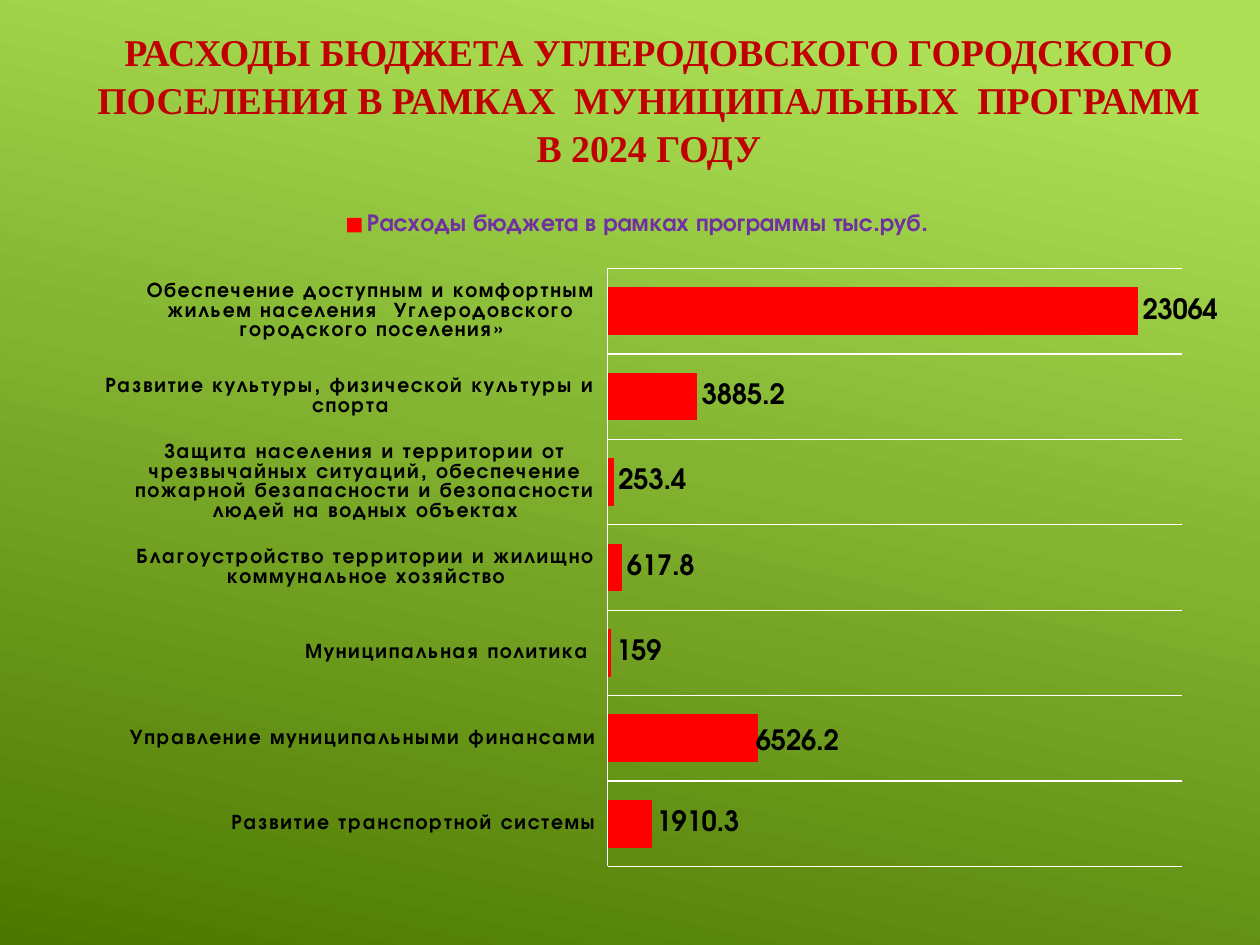
from lxml import etree
from pptx import Presentation
from pptx.chart.data import CategoryChartData
from pptx.dml.color import RGBColor
from pptx.enum.chart import XL_CHART_TYPE as ChartType
from pptx.enum.chart import XL_LABEL_POSITION as LabelPosition
from pptx.enum.chart import XL_LEGEND_POSITION as LegendPosition
from pptx.enum.chart import XL_TICK_LABEL_POSITION as TickLabelPosition
from pptx.enum.chart import XL_TICK_MARK as TickMark
from pptx.enum.text import MSO_ANCHOR, MSO_AUTO_SIZE, PP_ALIGN
from pptx.oxml import parse_xml
from pptx.util import Pt

CHART_NS = "http://schemas.openxmlformats.org/drawingml/2006/chart"
CHART_FONT = "TeX Gyre Adventor"
PROGRAMS = [
    ("Развитие транспортной системы", 1910.3),
    ("Управление муниципальными финансами", 6526.2),
    ("Муниципальная политика ", 159),
    ("Благоустройство территории и жилищно коммунальное хозяйство", 617.8),
    ("Защита населения и территории от чрезвычайных ситуаций, обеспечение "
     "пожарной безапасности и безопасности людей на водных объектах", 253.4),
    ("Развитие культуры, физической культуры и спорта", 3885.2),
    ("Обеспечение доступным и комфортным жильем населения  "
     "Углеродовского городского поселения»", 23064),
]


def set_font(font, name, size, color, bold=True):
    font.name, font.size, font.bold = name, Pt(size), bold
    font.color.rgb = RGBColor.from_string(color)


def make_layout(**settings):
    """Return a manual chart layout element with the given settings."""
    items = "".join(f'<c:{key} val="{value}"/>' for key, value in settings.items())
    return parse_xml(f'<c:layout xmlns:c="{CHART_NS}"><c:manualLayout>{items}'
                     "</c:manualLayout></c:layout>")


presentation = Presentation()
presentation.slide_width, presentation.slide_height = Pt(720), Pt(540)
slide = presentation.slides.add_slide(presentation.slide_layouts[5])

# Background
background = slide.background.fill
background.gradient()
background.gradient_angle = 258
for stop, position, color in zip(background.gradient_stops, (0.1, 1), ("ACDF55", "4C7800")):
    stop.position = position
    stop.color.rgb = RGBColor.from_string(color)

# Title
title = slide.shapes.title
title.left, title.top, title.width, title.height = Pt(41.8), Pt(23.8), Pt(658), Pt(64)
frame = title.text_frame
frame.word_wrap = True
frame.auto_size = MSO_AUTO_SIZE.NONE
frame.vertical_anchor = MSO_ANCHOR.MIDDLE
paragraph = frame.paragraphs[0]
paragraph.alignment = PP_ALIGN.CENTER
paragraph.line_spacing = 1.06
run = paragraph.add_run()
run.text = ("РАСХОДЫ БЮДЖЕТА УГЛЕРОДОВСКОГО ГОРОДСКОГО ПОСЕЛЕНИЯ "
            "В РАМКАХ  МУНИЦИПАЛЬНЫХ  ПРОГРАММ В 2024 ГОДУ")
set_font(run.font, "Times New Roman", 21.6, "C00000")

# Spending chart
data = CategoryChartData()
data.categories = [name for name, _ in PROGRAMS]
data.add_series("Расходы бюджета в рамках программы тыс.руб.", [value for _, value in PROGRAMS])
chart = slide.shapes.add_chart(
    ChartType.BAR_CLUSTERED, Pt(48.2), Pt(113.8), Pt(648), Pt(392.4), data).chart
set_font(chart.font, CHART_FONT, 10, "FFFFFF", bold=False)
chart.has_title = False
chart.has_legend = True
chart.legend.position = LegendPosition.TOP
chart.legend.include_in_layout = False
set_font(chart.legend.font, CHART_FONT, 14, "7030A0")

plot_area = chart.plots[0]
plot_area.gap_width = 79
plot_area.vary_by_categories = False
area_element = chart.element.find(f".//{{{CHART_NS}}}plotArea")
for old_layout in area_element.findall(f"{{{CHART_NS}}}layout"):
    area_element.remove(old_layout)
area_element.insert(0, make_layout(layoutTarget="inner", xMode="edge", yMode="edge",
                                   x=0.473, y=0.101, w=0.519, h=0.871))

value_axis = chart.value_axis
value_axis.minimum_scale, value_axis.maximum_scale = 0, 25000
value_axis.has_major_gridlines = False
value_axis.visible = False

category_axis = chart.category_axis
category_axis.major_tick_mark = category_axis.minor_tick_mark = TickMark.NONE
category_axis.tick_label_position = TickLabelPosition.LOW
category_axis.has_major_gridlines = True
for line in (category_axis.format.line, category_axis.major_gridlines.format.line):
    line.width = Pt(0.75)
    line.color.rgb = RGBColor.from_string("FFFFFF")
set_font(category_axis.tick_labels.font, CHART_FONT, 12, "000000")
for properties in category_axis._element.iter("{*}defRPr"):
    properties.set("spc", "120")

series = plot_area.series[0]
series.format.fill.solid()
series.format.fill.fore_color.rgb = RGBColor.from_string("FF0000")
series.invert_if_negative = False
labels = series.data_labels
labels.show_value = True
labels.position = LabelPosition.OUTSIDE_END
set_font(labels.font, CHART_FONT, 16, "000000")

# The finance label sits slightly left of and below its usual place
finance_label = series.points[1].data_label
finance_label.position = LabelPosition.OUTSIDE_END
set_font(finance_label.font, CHART_FONT, 16, "000000")
label_element = series._element.find(f".//{{{CHART_NS}}}dLbl")
label_element.insert(1, make_layout(x=-0.006, y=0.006))

presentation.save("out.pptx")
